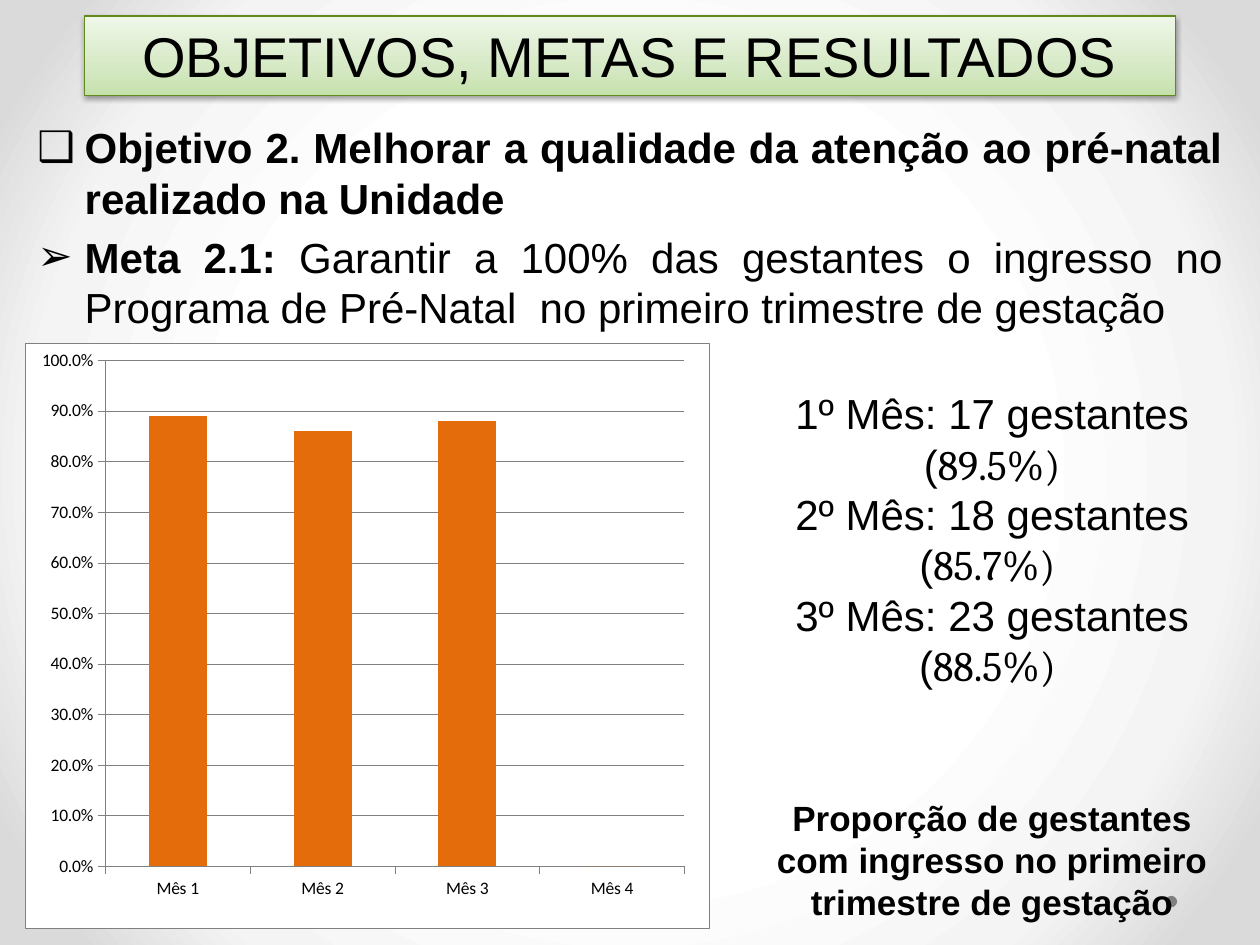
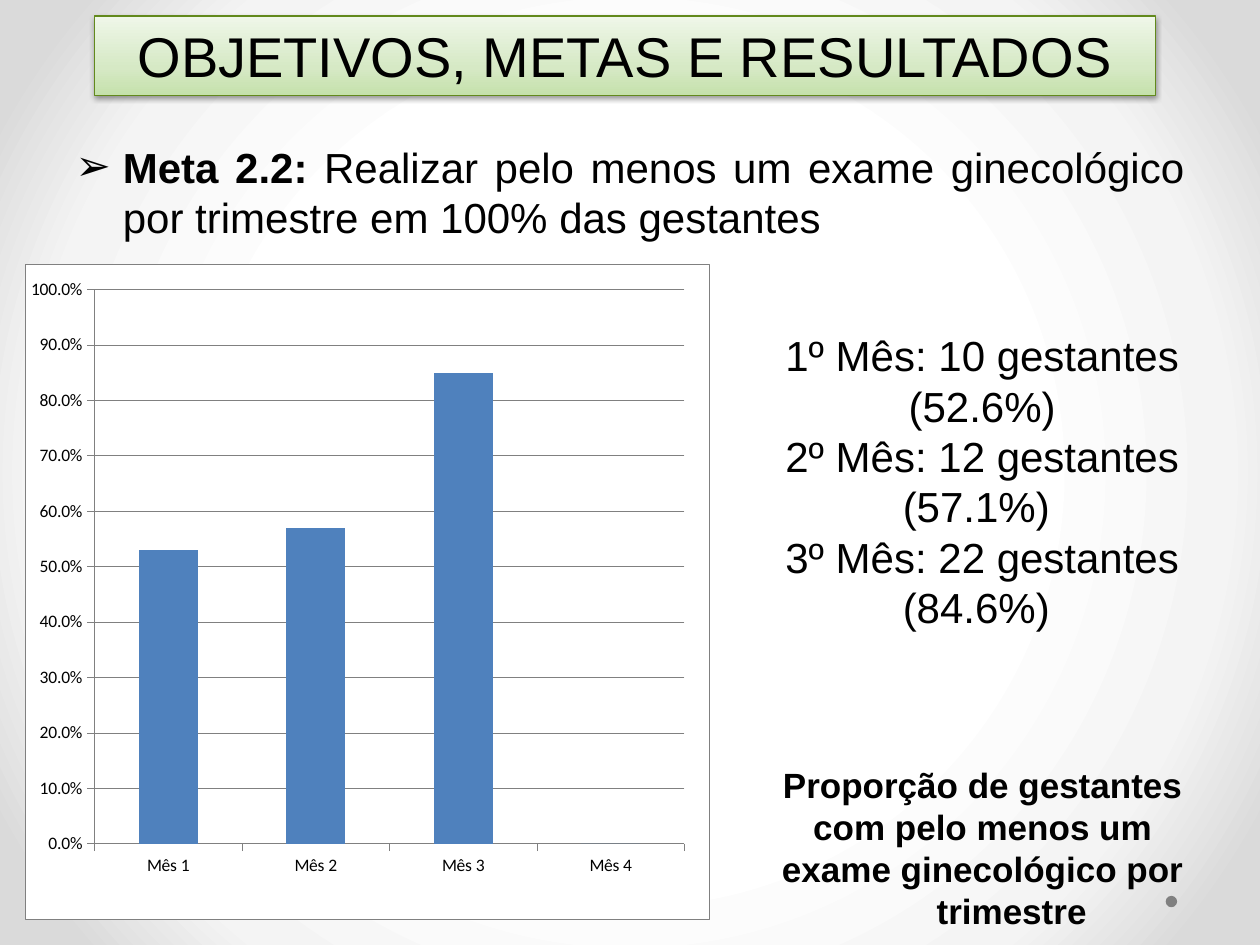
from pptx import Presentation, oxml, util as u
from pptx.chart import data as chart_data
from pptx.dml.color import RGBColor
from pptx.enum import chart as charts, shapes, text
from pptx.oxml import ns

# Shared colours and formats
BLACK = RGBColor(0x00, 0x00, 0x00)
WHITE = RGBColor(0xFF, 0xFF, 0xFF)
GRAY = RGBColor(0x80, 0x80, 0x80)
GREEN = RGBColor(0x62, 0x89, 0x1C)
ORANGE = RGBColor(0xE4, 0x6C, 0x0A)
BLUE = RGBColor(0x4F, 0x81, 0xBD)
TITLE_STOPS = [(0, "C5E1AB"), (35, "D6E9C5"), (100, "EFF7E9")]
BACKGROUND_STOPS = [(50, "FFFFFF"), (76, "F4F4F4"), (92, "DADADA")]

TITLE_FONT = {"name": "Arial", "size": u.Pt(32), "bold": False}
BODY_FONT = {"name": "Arial", "size": u.Pt(24), "bold": False}
CAPTION_FONT = {"name": "Arial", "size": u.Pt(20), "bold": True}
CHART_FONT = {"name": "Calibri", "size": u.Pt(10)}
BOLD = {"bold": True}
CAMBRIA = {"name": "Cambria"}
CENTER, JUSTIFY = text.PP_ALIGN.CENTER, text.PP_ALIGN.JUSTIFY
BOX_SIDES = ("left", "top", "width", "height")
VALUE_AXIS = {"minimum_scale": 0, "maximum_scale": 1, "major_unit": 0.1,
              "has_major_gridlines": True}
XMLNS = ns.nsdecls("a", "c")
CHART_FRAME = (f'<c:spPr {XMLNS}><a:solidFill><a:srgbClr val="{WHITE}"/></a:solidFill>'
               f'<a:ln w="3175"><a:solidFill><a:srgbClr val="{GRAY}"/></a:solidFill>'
               '</a:ln></c:spPr>')
PLOT_FILL = (f'<c:spPr {XMLNS}><a:solidFill><a:srgbClr val="{WHITE}"/></a:solidFill>'
             '<a:ln><a:noFill/></a:ln></c:spPr>')
TITLE_SHADOW = (f'<a:outerShdw {XMLNS} blurRad="39370" dist="20320" dir="5400000" '
                'rotWithShape="0"><a:srgbClr val="000000"><a:alpha val="38000"/>'
                '</a:srgbClr></a:outerShdw>')

# What differs from slide to slide; boxes are left, top, width, height in cm
SLIDES = [
    {
        "title_box": (1.7, 0.32, 22, 1.6),
        "body_box": (0.5, 2.33, 24.4, 4.8),
        "goals": [
            ("❑", [("Objetivo 2. Melhorar a qualidade da atenção ao pré-natal "
                    "realizado na Unidade", BOLD)]),
            ("➢", [("Meta 2.1: ", BOLD),
                   ("Garantir a 100% das gestantes o ingresso no Programa de "
                    "Pré-Natal  no primeiro trimestre de gestação", {})]),
        ],
        "chart_box": (0.51, 6.92, 13.79, 11.8),
        "plot": (0.117, 0.029, 0.847, 0.865),
        "values": (0.89, 0.86, 0.88, 0),
        "color": ORANGE,
        "caption_box": (14.96, 15.93, 10.08, 2.82),
        "caption": ["Proporção de gestantes com ingresso no primeiro "
                    "trimestre de gestação"],
        "months_box": (14.9, 7.69, 10.2, 6.4),
        "months": [(17, "89.5%)"), (18, "85.7%) "), (23, "88.5%) ")],
        "percent_font": CAMBRIA,
    },
    {
        "title_box": (1.9, 0.32, 21.4, 1.6),
        "body_box": (1.27, 2.72, 22.86, 2.39),
        "goals": [
            ("➢", [("Meta 2.2: ", BOLD),
                   ("Realizar pelo menos um exame ginecológico por trimestre "
                    "em 100% das gestantes", {})]),
        ],
        "chart_box": (0.51, 5.33, 13.79, 13.2),
        "plot": (0.101, 0.038, 0.863, 0.847),
        "values": (0.53, 0.57, 0.85, 0),
        "color": BLUE,
        "caption_box": (15.01, 15.27, 9.6, 3.68),
        "caption": ["Proporção de gestantes com pelo menos um exame "
                    "ginecológico por", "trimestre"],
        "months_box": (15, 6.52, 9.6, 6.4),
        "months": [(10, "52.6%)"), (12, "57.1%) "), (22, "84.6%) ")],
        "percent_font": {},
    },
]


def set_gradient(fill, owner, stops, direction):
    """Give a fill its colour stops and its linear or circular direction."""
    fill.gradient()
    gradient = owner.find(".//" + ns.qn("a:gradFill"))
    for child in list(gradient):
        gradient.remove(child)
    stop_list = "".join(f'<a:gs pos="{position * 1000}"><a:srgbClr val="{color}"/></a:gs>'
                        for position, color in stops)
    gradient.append(oxml.parse_xml(f"<a:gsLst {XMLNS}>{stop_list}</a:gsLst>"))
    gradient.append(oxml.parse_xml(direction))


def write_paragraphs(frame, paragraphs, font_format, alignment):
    """Write lists of (text, font changes) runs, one list a paragraph."""
    frame.word_wrap = True
    for index, runs in enumerate(paragraphs):
        paragraph = frame.add_paragraph() if index else frame.paragraphs[0]
        paragraph.alignment = alignment
        for words, changes in runs:
            run = paragraph.add_run()
            run.text = words
            run.font.color.rgb = BLACK
            for name, value in {**font_format, **changes}.items():
                setattr(run.font, name, value)


presentation = Presentation()
presentation.slide_width = u.Cm(25.4)
presentation.slide_height = u.Cm(19.05)

# Background of the master
master = presentation.slide_master
set_gradient(master.background.fill, master.element, BACKGROUND_STOPS,
             f'<a:path {XMLNS} path="circle"><a:fillToRect l="50000" t="50000" '
             'r="50000" b="50000"/></a:path>')

for number, content in enumerate(SLIDES):
    slide = presentation.slides.add_slide(presentation.slide_layouts[1])
    title, body = slide.shapes.title, slide.placeholders[1]

    # Footer dots, moved to the master so that every slide has them
    for dot_left in (23.5, 1.57) if number == 0 else ():
        dot = slide.shapes.add_shape(shapes.MSO_SHAPE.OVAL, u.Cm(dot_left), u.Cm(18.06),
                                     u.Cm(0.23), u.Cm(0.23))
        dot.shadow.inherit = False
        dot.fill.solid()
        dot.fill.fore_color.rgb = GRAY
        dot.line.fill.background()
        master.element.cSld.spTree.append(dot.element)

    for placeholder, box in ((title, content["title_box"]), (body, content["body_box"])):
        for side, length in zip(BOX_SIDES, box):
            setattr(placeholder, side, u.Cm(length))
        placeholder.text_frame.auto_size = text.MSO_AUTO_SIZE.NONE

    # Title band
    set_gradient(title.fill, title.element, TITLE_STOPS,
                 f'<a:lin {XMLNS} ang="16200000" scaled="0"/>')
    title.line.color.rgb = GREEN
    title.line.width = u.Pt(0.75)
    title.shadow.inherit = False
    title.element.spPr.find(ns.qn("a:effectLst")).append(oxml.parse_xml(TITLE_SHADOW))
    title.text_frame.vertical_anchor = text.MSO_ANCHOR.BOTTOM
    write_paragraphs(title.text_frame, [[("OBJETIVOS, METAS E RESULTADOS", {})]],
                     TITLE_FONT, CENTER)
    title.text_frame.paragraphs[0].line_spacing = u.Pt(58)

    # Goals with their bullets
    write_paragraphs(body.text_frame, [runs for _, runs in content["goals"]],
                     BODY_FONT, JUSTIFY)
    for paragraph, (bullet, _) in zip(body.text_frame.paragraphs, content["goals"]):
        paragraph._p.get_or_add_pPr().append(
            oxml.parse_xml(f'<a:buChar {XMLNS} char="{bullet}"/>'))

    # Column chart
    monthly = chart_data.CategoryChartData(number_format="0.0%")
    monthly.categories = [f"Mês {month}" for month in range(1, 5)]
    monthly.add_series("Series 1", content["values"])
    chart = slide.shapes.add_chart(charts.XL_CHART_TYPE.COLUMN_CLUSTERED,
                                   *map(u.Cm, content["chart_box"]), monthly).chart
    chart.has_legend = False
    chart.has_title = False
    plot = chart.plots[0]
    plot.gap_width = 150
    plot.vary_by_categories = False
    columns = plot.series[0].format.fill
    columns.solid()
    columns.fore_color.rgb = content["color"]

    # Chart axes and fonts
    value_axis, category_axis = chart.value_axis, chart.category_axis
    for name, value in VALUE_AXIS.items():
        setattr(value_axis, name, value)
    for axis in (value_axis, category_axis):
        axis.major_tick_mark = charts.XL_TICK_MARK.OUTSIDE
        axis.minor_tick_mark = charts.XL_TICK_MARK.NONE
    value_axis.tick_labels.number_format = "0.0%"
    value_axis.tick_labels.number_format_is_linked = False
    for owner in (value_axis, category_axis, value_axis.major_gridlines):
        owner.format.line.color.rgb = GRAY
        owner.format.line.width = u.Pt(0.25)
    for font in (chart.font, value_axis.tick_labels.font, category_axis.tick_labels.font):
        font.color.rgb = BLACK
        for name, value in CHART_FONT.items():
            setattr(font, name, value)

    # Chart frame and place of the plot area
    frame = chart.element.find(ns.qn("c:chart"))
    frame.addnext(oxml.parse_xml(CHART_FRAME))
    plot_area = frame.find(ns.qn("c:plotArea"))
    for layout in plot_area.findall(ns.qn("c:layout")):
        plot_area.remove(layout)
    modes = '<c:xMode val="edge"/><c:yMode val="edge"/>'
    sizes = "".join(f'<c:{key} val="{share}"/>' for key, share in zip("xywh", content["plot"]))
    plot_area.insert(0, oxml.parse_xml(
        f'<c:layout {XMLNS}><c:manualLayout><c:layoutTarget val="inner"/>'
        f"{modes}{sizes}</c:manualLayout></c:layout>"))
    plot_area.append(oxml.parse_xml(PLOT_FILL))

    # Caption and monthly figures
    caption = [[(line, {})] for line in content["caption"]]
    months = [[(f"{month}º Mês: {count} gestantes (", {}),
               (percent, content["percent_font"])]
              for month, (count, percent) in enumerate(content["months"], 1)]
    for box, paragraphs, font_format in (
            (content["caption_box"], caption, CAPTION_FONT),
            (content["months_box"], months, BODY_FONT)):
        text_box = slide.shapes.add_textbox(*map(u.Cm, box))
        write_paragraphs(text_box.text_frame, paragraphs, font_format, CENTER)
        text_box.text_frame.auto_size = text.MSO_AUTO_SIZE.SHAPE_TO_FIT_TEXT
        if paragraphs is caption:
            for paragraph in text_box.text_frame.paragraphs[1:]:
                paragraph._p.get_or_add_pPr().set("marL", str(u.Cm(1.17)))

presentation.save("out.pptx")
